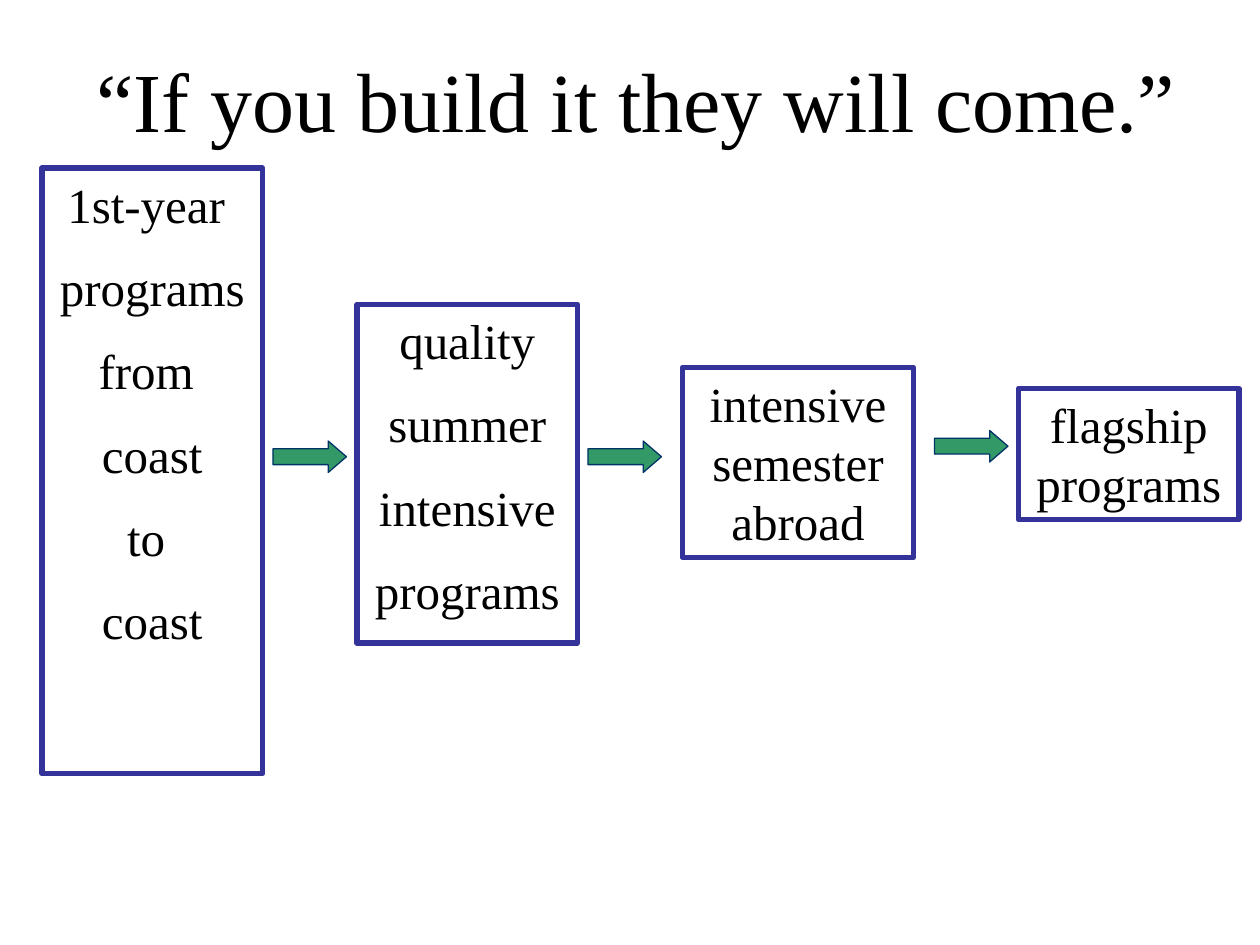
from dataclasses import dataclass

from pptx import Presentation
from pptx.dml.color import RGBColor
from pptx.enum.shapes import MSO_SHAPE
from pptx.enum.text import MSO_ANCHOR, PP_ALIGN
from pptx.util import Inches, Pt

RECTANGLE = MSO_SHAPE.RECTANGLE
RIGHT_ARROW = MSO_SHAPE.RIGHT_ARROW
TOP = MSO_ANCHOR.TOP
LEFT, CENTER = PP_ALIGN.LEFT, PP_ALIGN.CENTER
BLANK_LAYOUT = 6
COLUMNS, ROWS = 120, 90

STAGES = [
    ((4, 16, 21, 57.7), ["1st-year ", "programs ", "from ", "coast", "to ", "coast"]),
    ((34, 29, 21, 32.25), ["quality", "summer", "intensive", "programs"]),
    ((65, 35, 22, 18.1), ["intensive semester abroad"]),
    ((97, 37, 21, 12.5), ["flagship programs"]),
]
ARROWS = [(26, 42, 7, 3), (56, 42, 7, 3), (89, 41, 7, 3)]


@dataclass(frozen=True)
class Theme:
    """Colours, font and sizes used on the slide."""

    font: str = "Times New Roman"
    text: RGBColor = RGBColor(0x00, 0x00, 0x00)
    frame: RGBColor = RGBColor(0x33, 0x33, 0x99)
    arrow: RGBColor = RGBColor(0x33, 0x99, 0x66)
    arrow_edge: RGBColor = RGBColor(0x00, 0x33, 0x66)
    title_size: int = 48
    stage_size: int = 28


THEME = Theme()


def place(presentation, box):
    """Turn a box in grid columns and rows into slide lengths."""
    column = presentation.slide_width / COLUMNS
    row = presentation.slide_height / ROWS
    left, top, width, height = box
    return [round(length) for length in (left * column, top * row, width * column, height * row)]


def write_lines(shape, lines, size, alignment):
    """Write one paragraph per line, spaced by half the type size."""
    frame = shape.text_frame
    frame.word_wrap = True
    frame.vertical_anchor = TOP
    for index, line in enumerate(lines):
        paragraph = frame.add_paragraph() if index else frame.paragraphs[0]
        paragraph.alignment = alignment
        if index:
            paragraph.space_before = Pt(size / 2)
        run = paragraph.add_run()
        run.text = line
        run.font.name = THEME.font
        run.font.size = Pt(size)
        run.font.color.rgb = THEME.text


def add_title(presentation, slide, box, title):
    """Add the slide title."""
    shape = slide.shapes.add_textbox(*place(presentation, box))
    write_lines(shape, [title], THEME.title_size, LEFT)


def add_stage(presentation, slide, box, lines):
    """Add one framed stage of the programme."""
    shape = slide.shapes.add_shape(RECTANGLE, *place(presentation, box))
    shape.shadow.inherit = False
    shape.fill.background()
    shape.line.color.rgb = THEME.frame
    shape.line.width = Pt(3)
    write_lines(shape, lines, THEME.stage_size, CENTER)


def add_arrow(presentation, slide, box):
    """Add a block arrow leading to the next stage."""
    shape = slide.shapes.add_shape(RIGHT_ARROW, *place(presentation, box))
    shape.shadow.inherit = False
    shape.adjustments[0] = 0.5
    shape.adjustments[1] = 0.58
    shape.fill.solid()
    shape.fill.fore_color.rgb = THEME.arrow
    shape.line.color.rgb = THEME.arrow_edge
    shape.line.width = Pt(0.75)


def main():
    """Build and save the slide."""
    presentation = Presentation()
    presentation.slide_width = Inches(10)
    presentation.slide_height = Inches(7.5)
    slide = presentation.slides.add_slide(presentation.slide_layouts[BLANK_LAYOUT])
    add_title(presentation, slide, (8, 4, 109, 11), "“If you build it they will come.”")
    for box, lines in STAGES:
        add_stage(presentation, slide, box, lines)
    for box in ARROWS:
        add_arrow(presentation, slide, box)
    presentation.save("out.pptx")


if __name__ == "__main__":
    main()
